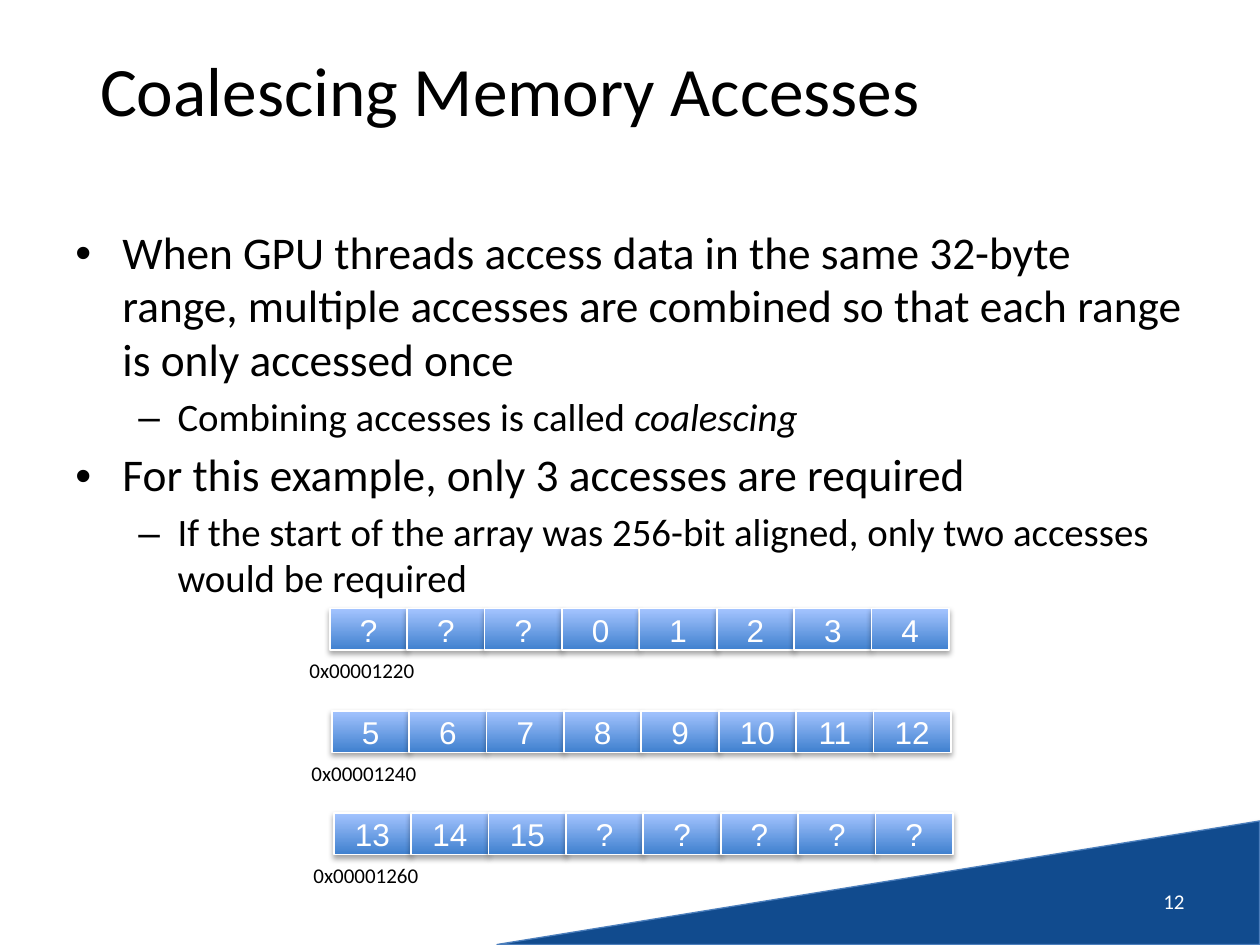
from dataclasses import dataclass
from lxml import etree
from pptx import Presentation
from pptx.dml.color import RGBColor
from pptx.enum.shapes import MSO_SHAPE
from pptx.enum.text import MSO_ANCHOR, PP_ALIGN
from pptx.oxml import parse_xml
from pptx.oxml.ns import qn
from pptx.util import Cm, Pt

RECT, WEDGE = MSO_SHAPE.RECTANGLE, MSO_SHAPE.RIGHT_TRIANGLE
TOP, MID = MSO_ANCHOR.TOP, MSO_ANCHOR.MIDDLE
LEFT, MIDDLE, RIGHT = PP_ALIGN.LEFT, PP_ALIGN.CENTER, PP_ALIGN.RIGHT
NS = "http://schemas.openxmlformats.org/drawingml/2006/main"
SHADOW = (
    f'<a:outerShdw xmlns:a="{NS}" blurRad="40000" dist="23000" dir="5400000" '
    'rotWithShape="0"><a:srgbClr val="000000"><a:alpha val="35000"/>'
    "</a:srgbClr></a:outerShdw>"
)


@dataclass(frozen=True)
class Theme:
    """Colours, fonts and type sizes of the slide."""

    ink: str = "000000"
    white: str = "FFFFFF"
    navy: str = "114B8E"
    edge: str = "4B7EBC"
    deep: str = "3F80CE"
    pale: str = "A4C4FF"
    face: str = "Calibri"
    cell_face: str = "Arial"
    title: float = 39.6
    body: tuple = (25.9, 22.2)
    cell: float = 18
    small: float = 12


THEME = Theme()
LEVELS = (
    {"mark": "•", "left": 0.95, "hang": 0.95, "gap": 5.2},
    {"mark": "–", "left": 2.06, "hang": 0.79, "gap": 4.4},
)
POINTS = (
    (0, ("When GPU threads access data in the same 32-byte range, multiple "
         "accesses are combined so that each range is only accessed once",)),
    (1, ("Combining accesses is called ", "coalescing")),
    (0, ("For this example, only 3 accesses are required",)),
    (1, ("If the start of the array was 256-bit aligned, only two accesses "
         "would be required",)),
)
ROWS = (
    ("0x00001220", "? ? ? 0 1 2 3 4"),
    ("0x00001240", "5 6 7 8 9 10 11 12"),
    ("0x00001260", "13 14 15 ? ? ? ? ?"),
)


def apply(item, form):
    """Set each attribute in the format on the item."""
    for name, value in form.items():
        setattr(item, name, value)


def style(font, size, color=THEME.ink, face=THEME.face):
    """Set the size, colour and typeface of a font."""
    apply(font, {"size": Pt(size), "name": face})
    font.color.rgb = RGBColor.from_string(color)


def write(shape, text, size, color=THEME.ink, face=THEME.face,
          align=LEFT, anchor=TOP, wrap=True):
    """Write one line of styled text in a shape."""
    frame = shape.text_frame
    apply(frame, {"word_wrap": wrap, "vertical_anchor": anchor})
    para = frame.paragraphs[0]
    para.alignment = align
    run = para.add_run()
    run.text = text
    style(run.font, size, color, face)


def finish(shape, color, width):
    """Give a shape its outline and soft shadow."""
    shape.line.color.rgb = RGBColor.from_string(color)
    shape.line.width = Pt(width)
    shape.shadow.inherit = False
    shape._element.spPr.find(qn("a:effectLst")).append(parse_xml(SHADOW))


def add_wedge(slide, box):
    """Draw the corner wedge, turned a quarter to the left."""
    wedge = slide.shapes.add_shape(WEDGE, *map(Cm, box))
    wedge.rotation = 270
    wedge.fill.solid()
    wedge.fill.fore_color.rgb = RGBColor.from_string(THEME.navy)
    finish(wedge, THEME.edge, 0.75)


def add_label(shapes, box, text, size, **form):
    """Place a text box with one line of text."""
    write(shapes.add_textbox(*map(Cm, box)), text, size, **form)


def add_body(slide, box):
    """Place the two-level bullet list."""
    frame = slide.shapes.add_textbox(*map(Cm, box)).text_frame
    apply(frame, {"word_wrap": True, "margin_right": Cm(0.1)})
    for index, (level, parts) in enumerate(POINTS):
        para = frame.add_paragraph() if index else frame.paragraphs[0]
        look = LEVELS[level]
        props = para._p.get_or_add_pPr()
        props.set("marL", str(Cm(look["left"])))
        props.set("indent", str(-Cm(look["hang"])))
        etree.SubElement(props, qn("a:buFont")).set("typeface", "Arial")
        etree.SubElement(props, qn("a:buChar")).set("char", look["mark"])
        apply(para, {"level": level, "line_spacing": 0.98})
        if index:
            para.space_before = Pt(look["gap"])
        for order, text in enumerate(parts):
            run = para.add_run()
            run.text = text
            style(run.font, THEME.body[level])
            run.font.italic = order == 1


def add_row(slide, box, label, cells):
    """Draw one memory range as joined cells with its address below."""
    left, top, width, height = box
    shapes = slide.shapes.add_group_shape().shapes
    step = width / len(cells)
    for index, text in enumerate(cells):
        place = (left + index * step, top, step, height)
        cell = shapes.add_shape(RECT, *map(Cm, place))
        cell.fill.gradient()
        cell.fill.gradient_angle = 90
        for stop, color in zip(cell.fill.gradient_stops, (THEME.deep, THEME.pale)):
            stop.color.rgb = RGBColor.from_string(color)
        finish(cell, THEME.white, 1)
        apply(cell.text_frame, {"margin_left": 0, "margin_right": 0})
        write(cell, text, THEME.cell, THEME.white, THEME.cell_face, MIDDLE, MID)
    add_label(shapes, (left - 0.66, top + 0.87, 2.64, 0.76), label,
              THEME.small, wrap=False)


def add_ranges(slide, box):
    """Stack the memory ranges, each a little to the right of the last."""
    left, top, width, height = box
    for index, (label, cells) in enumerate(ROWS):
        place = (left + index * 0.04, top + index * 2.06, width, height)
        add_row(slide, place, label, cells.split())


def main():
    """Build and save the slide."""
    deck = Presentation()
    apply(deck, {"slide_width": Cm(25.4), "slide_height": Cm(19.05)})
    slide = deck.slides.add_slide(deck.slide_layouts[6])
    add_wedge(slide, (16.46, 10.11, 2.49, 15.37))
    add_label(slide.shapes, (1.27, 0.2, 18.03, 3.18), "Coalescing Memory Accesses",
              THEME.title, align=MIDDLE, anchor=MID)
    add_body(slide, (1.27, 4.45, 22.86, 7.44))
    add_label(slide.shapes, (18.21, 17.65, 5.92, 1.02), "12", THEME.small,
              color=THEME.white, align=RIGHT, anchor=MID)
    add_ranges(slide, (6.65, 12.27, 12.48, 0.84))
    deck.save("out.pptx")


if __name__ == "__main__":
    main()
